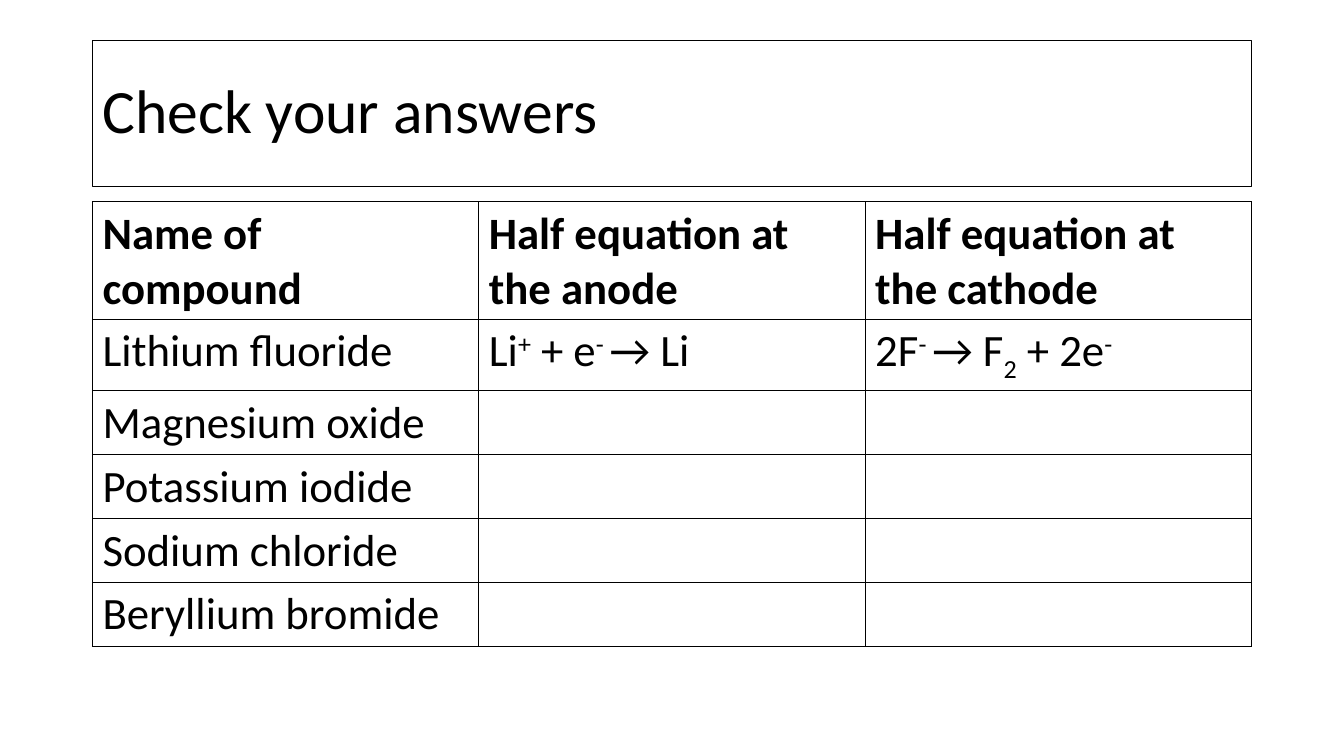
"""Build a slide for checking half equations of electrolysis."""
from lxml import etree
from pptx import Presentation
from pptx.dml.color import RGBColor
from pptx.enum.text import MSO_ANCHOR
from pptx.oxml.ns import qn
from pptx.util import Cm, Pt

MIDDLE = MSO_ANCHOR.MIDDLE
BLACK = RGBColor(0, 0, 0)
WHITE = RGBColor(255, 255, 255)
FONT = "Calibri"
SUPER, SUB = 30, -25

HEADINGS = ["Name of compound", "Half equation at the anode", "Half equation at the cathode"]
ANODE = ["Li", ("+", SUPER), " + e", ("- ", SUPER), "→ Li"]
CATHODE = ["2F", ("- ", SUPER), "→ F", ("2", SUB), " + 2e", ("-", SUPER)]
ANSWERS = [
    ["Lithium fluoride", ANODE, CATHODE],
    ["Magnesium oxide"],
    ["Potassium iodide"],
    ["Sodium chloride"],
    ["Beryllium bromide"],
]


def write_text(frame, content, size=32, bold=False, spacing=None):
    """Write a string, or a list of plain and raised or lowered pieces, into a frame."""
    paragraph = frame.paragraphs[0]
    paragraph.line_spacing = spacing
    for piece in [content] if isinstance(content, str) else content:
        text, baseline = (piece, 0) if isinstance(piece, str) else piece
        run = paragraph.add_run()
        run.text = text
        run.font.name = FONT
        run.font.size = Pt(size)
        run.font.bold = bold
        run.font.color.rgb = BLACK
        if baseline:
            run._r.get_or_add_rPr().set("baseline", str(baseline * 1000))


def style_cell(cell):
    """Give a cell a white fill and thin black borders."""
    properties = cell._tc.get_or_add_tcPr()
    for side in ("lnL", "lnR", "lnT", "lnB"):
        border = etree.SubElement(properties, qn(f"a:{side}"), w=str(Pt(1)))
        fill = etree.SubElement(border, qn("a:solidFill"))
        etree.SubElement(fill, qn("a:srgbClr"), val=str(BLACK))
    cell.fill.solid()
    cell.fill.fore_color.rgb = WHITE


def add_title(slide, left, top, width, height):
    """Place the outlined title in the given box."""
    title = slide.shapes.add_textbox(left, top, width, height)
    title.line.color.rgb = BLACK
    title.line.width = Pt(0.75)
    title.text_frame.word_wrap = True
    title.text_frame.vertical_anchor = MIDDLE
    write_text(title.text_frame, "Check your answers", size=44, spacing=0.9)


def add_answers(slide, left, top, width, height):
    """Place the table of compounds and half equations in the given box."""
    lines = [HEADINGS] + ANSWERS
    frame = slide.shapes.add_table(len(lines), len(HEADINGS), left, top, width, height)
    answers = frame.table
    answers.horz_banding = False
    for row_index, line in enumerate(lines):
        answers.rows[row_index].height = Cm(1.04)
        for column_index in range(len(HEADINGS)):
            cell = answers.cell(row_index, column_index)
            style_cell(cell)
            if column_index < len(line):
                write_text(cell.text_frame, line[column_index], bold=row_index == 0)
    frame.height = height


def main():
    """Build and save the slide."""
    deck = Presentation()
    deck.slide_width, deck.slide_height = Cm(33.87), Cm(19.05)
    slide = deck.slides.add_slide(deck.slide_layouts[6])
    left, width = Cm(2.33), Cm(29.21)
    add_title(slide, left, Cm(1.02), width, Cm(3.68))
    add_answers(slide, left, Cm(5.08), width, Cm(11))
    deck.save("out.pptx")


if __name__ == "__main__":
    main()
